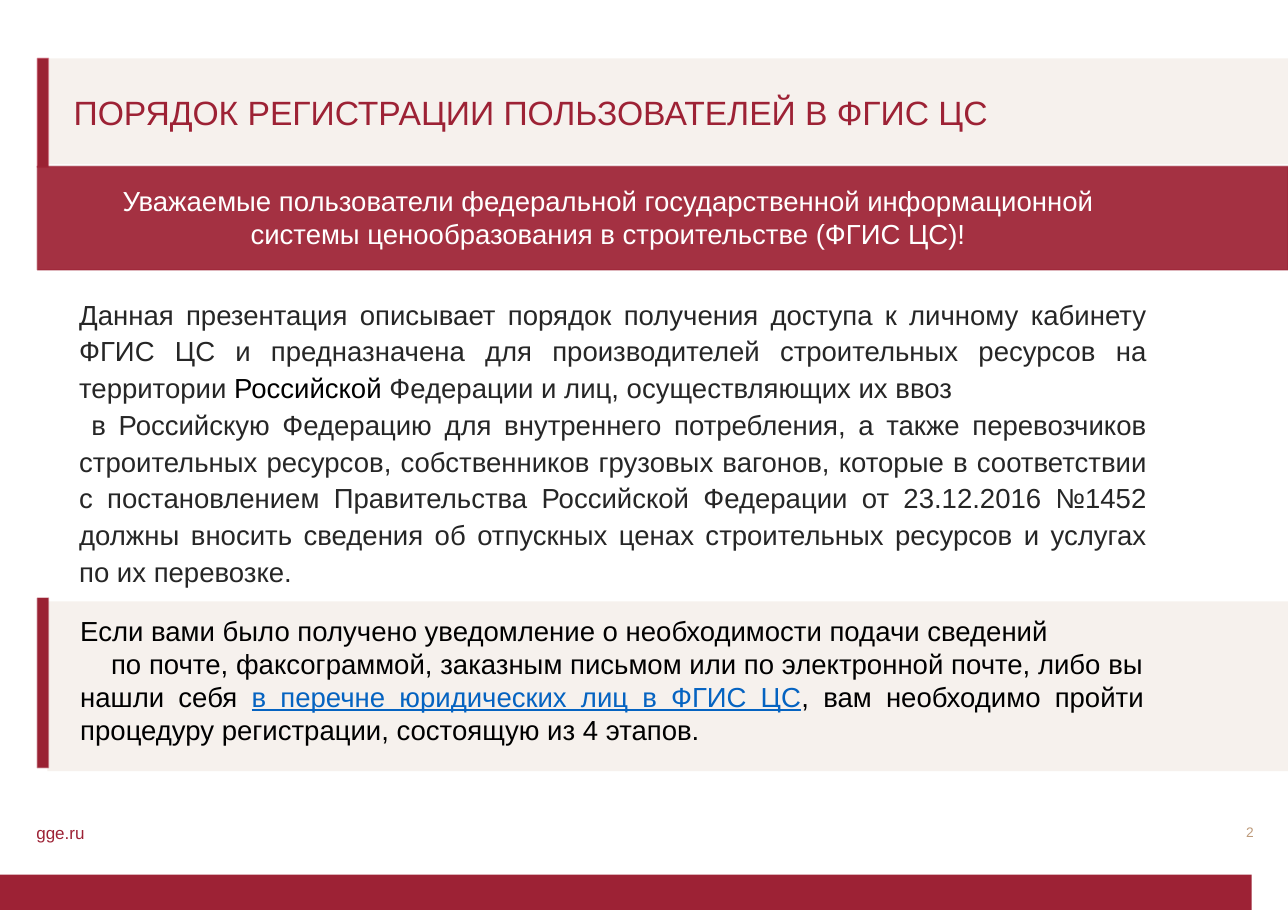
import pptx
import pptx.dml.color
import pptx.enum.shapes
import pptx.enum.text
import pptx.oxml.ns
import pptx.util
from lxml import etree

Inches = pptx.util.Inches
Pt = pptx.util.Pt
ALIGN = pptx.enum.text.PP_ALIGN
ANCHOR = pptx.enum.text.MSO_ANCHOR

SLIDE_WIDTH, SLIDE_HEIGHT = 11.69, 8.27
CRIMSON, BEIGE, WHITE, BLACK = "9D2235", "E9DDD3", "FFFFFF", "000000"
ACCENT, DARK, LINK, TAN = "9A2233", "262626", "0563C1", "BD9A7A"

TITLE = "ПОРЯДОК РЕГИСТРАЦИИ ПОЛЬЗОВАТЕЛЕЙ В ФГИС ЦС"
GREETING = ("Уважаемые пользователи федеральной государственной информационной "
            "системы ценообразования в строительстве (ФГИС ЦС)!")
PURPOSE = [
    (0, [("Данная презентация описывает порядок получения доступа к личному кабинету "
          "ФГИС ЦС и предназначена для производителей строительных ресурсов "
          "на территории ", DARK),
         ("Российской", BLACK),
         (" Федерации и лиц, осуществляющих их ввоз", DARK)]),
    (0.11, [("в Российскую Федерацию для внутреннего потребления, а также перевозчиков "
             "строительных ресурсов, собственников грузовых вагонов, которые в соответствии "
             "с постановлением Правительства Российской Федерации от 23.12.2016 №1452 "
             "должны вносить сведения об отпускных ценах строительных ресурсов и услугах "
             "по их перевозке.", DARK)]),
]
NOTICE = [
    (0, [("Если вами было получено уведомление о необходимости подачи сведений", BLACK)]),
    (0.28, [("по почте, факсограммой, заказным письмом или по электронной почте, "
             "либо вы нашли себя ", BLACK),
            ("в перечне юридических лиц в ФГИС ЦС", LINK),
            (", вам необходимо пройти процедуру регистрации, состоящую из 4 этапов.", BLACK)]),
]


def set_color(color_format, color, opacity=100):
    """Apply a hex colour and an opacity in percent."""
    color_format.rgb = pptx.dml.color.RGBColor.from_string(color)
    if opacity < 100:
        for element in color_format._xFill.iter(pptx.oxml.ns.qn("a:srgbClr")):
            alpha = etree.SubElement(element, pptx.oxml.ns.qn("a:alpha"))
            alpha.set("val", str(opacity * 1000))


def add_panel(slide, box, color, opacity=100, outline=None, outline_opacity=100):
    """Add a filled rectangle with an optional one-point outline."""
    shape = slide.shapes.add_shape(pptx.enum.shapes.MSO_SHAPE.RECTANGLE,
                                   *(Inches(length) for length in box))
    shape.shadow.inherit = False
    shape.fill.solid()
    set_color(shape.fill.fore_color, color, opacity)
    if outline:
        shape.line.width = Pt(1)
        shape.line.fill.solid()
        set_color(shape.line.fill.fore_color, outline, outline_opacity)
    else:
        shape.line.fill.background()
    return shape


def write_text(shape, paragraphs, size, align=ALIGN.LEFT, spacing=None,
               margins=(0.1, 0.05), anchor=ANCHOR.TOP):
    """Fill a shape with paragraphs given as first-line indent and coloured runs."""
    frame = shape.text_frame
    frame.word_wrap = True
    frame.vertical_anchor = anchor
    frame.margin_left = frame.margin_right = Inches(margins[0])
    frame.margin_top = frame.margin_bottom = Inches(margins[1])
    for index, (indent, runs) in enumerate(paragraphs):
        paragraph = frame.add_paragraph() if index else frame.paragraphs[0]
        paragraph.alignment = align
        paragraph.line_spacing = spacing
        if indent:
            paragraph._p.get_or_add_pPr().set("indent", str(Inches(indent)))
        for text, color in runs:
            run = paragraph.add_run()
            run.text = text
            run.font.name = "Arial"
            run.font.size = Pt(size)
            run.font.underline = color == LINK
            set_color(run.font.color, color)


def add_text(slide, box, paragraphs, size, **layout):
    """Add a text box and write its paragraphs."""
    shape = slide.shapes.add_textbox(*(Inches(length) for length in box))
    write_text(shape, paragraphs, size, **layout)


def add_header(slide, left, top, width, height):
    """Draw the beige title band with its accent bar."""
    add_panel(slide, (left + 0.1, top, width - 0.1, height), BEIGE, 39)
    add_text(slide, (left + 0.23, top + 0.3, 10.21, 0.49),
             [(0, [(TITLE, CRIMSON)])], 22, spacing=0.9)
    add_panel(slide, (left, top, 0.1, height + 0.03), ACCENT, 100, "BA2C44", 41)


def add_greeting(slide, left, top, width, height):
    """Draw the crimson greeting band."""
    add_panel(slide, (left, top, width, height), "9E2234", 93, CRIMSON, 49)
    add_text(slide, (left + 0.23, top + 0.11, 9.9, 0.71),
             [(0, [(GREETING, WHITE)])], 18, align=ALIGN.CENTER)


def add_notice(slide, left, top, width, height):
    """Draw the beige notice band with its accent bar."""
    add_panel(slide, (left + 0.09, top + 0.03, width - 0.09, height), BEIGE, 39)
    add_text(slide, (left + 0.29, top + 0.09, 9.85, 1.35), NOTICE, 18, align=ALIGN.JUSTIFY)
    add_panel(slide, (left, top, 0.1, height), ACCENT, 100, CRIMSON, 41)


def add_footer(slide, left, top, width, height):
    """Draw the site address, the page number and the bottom bar."""
    add_panel(slide, (left, top + height - 0.33, width, 0.32), CRIMSON)
    address = add_panel(slide, (left + 0.33, top, 1.06, 0.21), WHITE)
    write_text(address, [(0, [("gge.ru", CRIMSON)])], 11.1,
               margins=(0, 0), anchor=ANCHOR.MIDDLE)
    add_text(slide, (left + width - 0.22, top + 0.03, 0.24, 0.31), [(0, [("2", TAN)])], 9,
             align=ALIGN.RIGHT, spacing=Pt(10.8), margins=(0, 0))


def main():
    """Build and save the slide."""
    presentation = pptx.Presentation()
    presentation.slide_width = Inches(SLIDE_WIDTH)
    presentation.slide_height = Inches(SLIDE_HEIGHT)
    slide = presentation.slides.add_slide(presentation.slide_layouts[6])
    left = 0.34
    width = SLIDE_WIDTH - left
    add_footer(slide, 0, 7.45, 11.36, SLIDE_HEIGHT - 7.45)
    add_header(slide, left, 0.53, width, 0.96)
    add_greeting(slide, left, 1.51, width, 0.94)
    add_text(slide, (0.62, 2.62, 9.89, 2.79), PURPOSE, 18,
             align=ALIGN.JUSTIFY, spacing=Pt(24))
    add_notice(slide, left, 5.43, width, 1.54)
    presentation.save("out.pptx")


if __name__ == "__main__":
    main()
